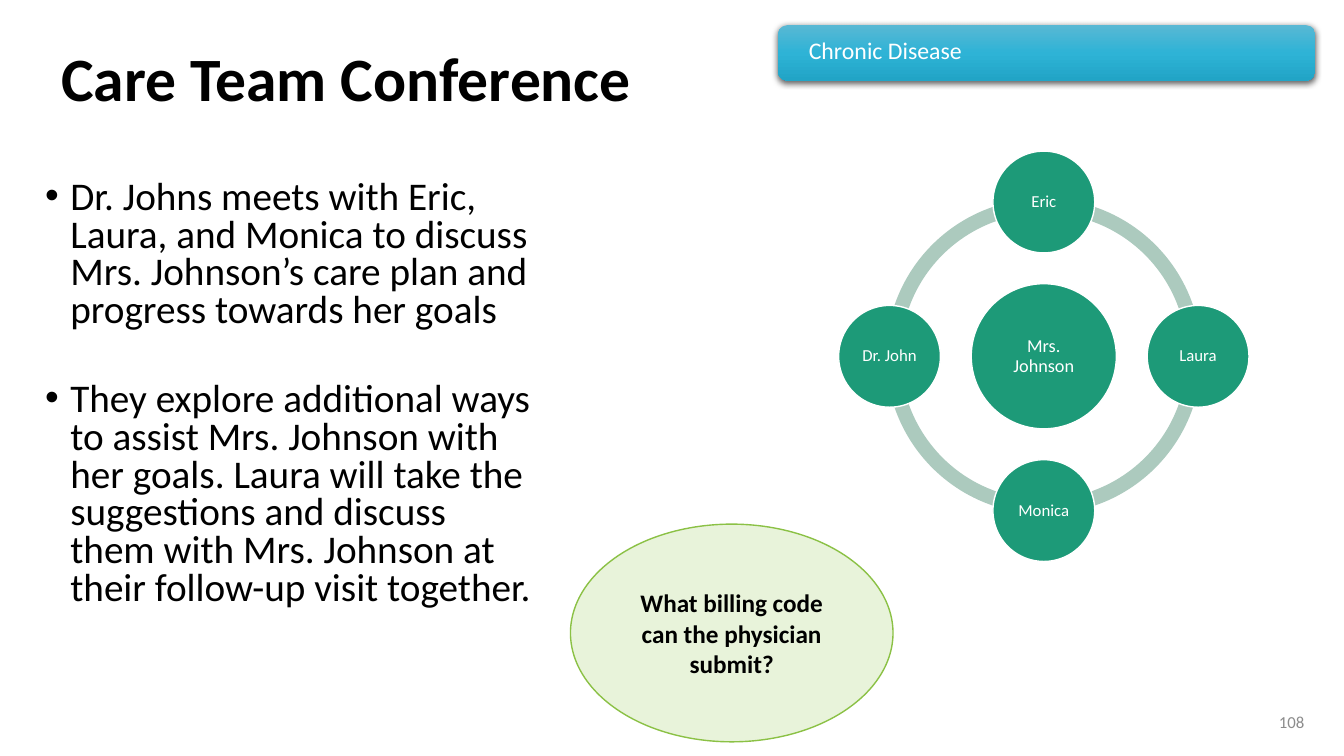
import copy
import math

import pptx
import pptx.dml.color
import pptx.enum.shapes
import pptx.enum.text
import pptx.oxml
import pptx.oxml.ns
import pptx.util

Pt = pptx.util.Pt
RGBColor = pptx.dml.color.RGBColor
MSO_SHAPE = pptx.enum.shapes.MSO_SHAPE
PP_ALIGN = pptx.enum.text.PP_ALIGN
MSO_ANCHOR = pptx.enum.text.MSO_ANCHOR
qn = pptx.oxml.ns.qn

BLACK = RGBColor(0x00, 0x00, 0x00)
WHITE = RGBColor(0xFF, 0xFF, 0xFF)
GRAY = RGBColor(0x8C, 0x8C, 0x8C)
GREEN = RGBColor(0x1D, 0x9A, 0x78)
PALE_GREEN = RGBColor(0xAC, 0xCA, 0xBE)
LIME = RGBColor(0x8B, 0xC1, 0x45)
PALE_LIME = RGBColor(0xE8, 0xF3, 0xDA)
BANNER_STOPS = [
    (0, RGBColor(0x59, 0xB8, 0xD4)),
    (0.5, RGBColor(0x2E, 0xB3, 0xD6)),
    (1, RGBColor(0x21, 0xA4, 0xC6)),
]

BULLETS = [
    "Dr. Johns meets with Eric, Laura, and Monica to discuss Mrs. Johnson’s "
    "care plan and progress towards her goals",
    "They explore additional ways to assist Mrs. Johnson with her goals. Laura "
    "will take the suggestions and discuss them with Mrs. Johnson at their "
    "follow-up visit together.",
]
CARE_TEAM = ["Eric", "Laura", "Monica", "Dr. John"]
CENTER_X, CENTER_Y = 745.6, 254.5
ORBIT_RADIUS = 110.2
RING_SIZE = 225.4


class SlideBuilder:
    font_name = "Calibri"

    def __init__(self, slide):
        self.slide = slide

    def set_text(self, shape, lines, size, color, bold=False,
                 align=PP_ALIGN.LEFT, anchor=MSO_ANCHOR.MIDDLE, spacing=1.0):
        frame = shape.text_frame
        frame.word_wrap = True
        frame.vertical_anchor = anchor
        frame.text = "\n".join(lines)
        for paragraph in frame.paragraphs:
            paragraph.alignment = align
            paragraph.line_spacing = spacing
            for run in paragraph.runs:
                run.font.name = self.font_name
                run.font.size = Pt(size)
                run.font.bold = bold
                run.font.color.rgb = color

    def text(self, left, top, width, height, lines, size, color, **style):
        box = self.slide.shapes.add_textbox(
            Pt(left), Pt(top), Pt(width), Pt(height))
        self.set_text(box, lines, size, color, **style)
        return box

    def bullets(self, left, top, width, height, lines, size, gap):
        box = self.text(left, top, width, height, lines, size, BLACK,
                        anchor=MSO_ANCHOR.TOP, spacing=0.8)
        for index, paragraph in enumerate(box.text_frame.paragraphs):
            if index:
                paragraph.space_before = Pt(gap)
            properties = paragraph._p.get_or_add_pPr()
            properties.set("marL", str(Pt(18)))
            properties.set("indent", str(-Pt(18)))
            namespace = pptx.oxml.ns.nsdecls("a")
            properties.append(pptx.oxml.parse_xml(
                f'<a:buFont {namespace} typeface="Arial"/>'))
            properties.append(pptx.oxml.parse_xml(
                f'<a:buChar {namespace} char="•"/>'))

    def shape(self, kind, left, top, width, height, fill=None, line=None):
        shape = self.slide.shapes.add_shape(
            kind, Pt(left), Pt(top), Pt(width), Pt(height))
        shape.shadow.inherit = False
        if fill is not None:
            shape.fill.solid()
            shape.fill.fore_color.rgb = fill
        if line is None:
            shape.line.fill.background()
        else:
            shape.line.color.rgb = line
            shape.line.width = Pt(1)
        return shape

    def banner(self, left, top, width, height, label):
        shape = self.shape(MSO_SHAPE.ROUNDED_RECTANGLE,
                           left, top, width, height)
        shape.fill.gradient()
        shape.fill.gradient_angle = 270
        properties = shape._element.spPr
        stop_list = properties.find(".//" + qn("a:gsLst"))
        stop_list.insert(1, copy.deepcopy(stop_list[0]))
        for stop, (position, color) in zip(shape.fill.gradient_stops,
                                           BANNER_STOPS):
            stop.position = position
            stop.color.rgb = color
        properties.find(qn("a:effectLst")).append(pptx.oxml.parse_xml(
            f'<a:outerShdw {pptx.oxml.ns.nsdecls("a")} blurRad="{Pt(4.5)}" '
            f'dist="{Pt(1.5)}" dir="5400000" rotWithShape="0">'
            '<a:srgbClr val="000000"><a:alpha val="63000"/></a:srgbClr>'
            '</a:outerShdw>'))
        self.set_text(shape, [label], 17, WHITE, spacing=0.9)
        shape.text_frame.margin_left = Pt(20)
        shape.text_frame.margin_top = Pt(0)
        shape.text_frame.margin_bottom = Pt(2)

    def ring(self, center_x, center_y, size):
        quarter = 54
        for index in range(4):
            arc = self.shape(MSO_SHAPE.BLOCK_ARC, center_x - size / 2,
                             center_y - size / 2, size, size, PALE_GREEN)
            arc.adjustments[0] = quarter * index
            arc.adjustments[1] = quarter * (index + 1) % 216
            arc.adjustments[2] = 0.046

    def person(self, center_x, center_y, diameter, name, size):
        circle = self.shape(MSO_SHAPE.OVAL, center_x - diameter / 2,
                            center_y - diameter / 2, diameter, diameter,
                            GREEN, WHITE)
        self.set_text(circle, [name], size, WHITE,
                      align=PP_ALIGN.CENTER, spacing=0.9)
        frame = circle.text_frame
        frame.margin_left = frame.margin_right = Pt(1.4)
        frame.margin_top = frame.margin_bottom = Pt(1.4)

    def question(self, left, top, width, height, wording):
        oval = self.shape(MSO_SHAPE.OVAL, left, top, width, height,
                          PALE_LIME, LIME)
        self.set_text(oval, [wording], 18, BLACK, bold=True,
                      align=PP_ALIGN.CENTER)


def main():
    presentation = pptx.Presentation()
    presentation.slide_width = Pt(960)
    presentation.slide_height = Pt(540)
    slide = presentation.slides.add_slide(presentation.slide_layouts[6])
    builder = SlideBuilder(slide)

    builder.text(36.7, 28.8, 524.2, 58.3, ["Care Team Conference"], 44, BLACK,
                 bold=True, spacing=0.9)
    builder.bullets(25.2, 125.3, 365, 347, BULLETS, 28, gap=37)
    builder.text(722.9, 501.1, 216, 28.8, ["108"], 12, GRAY,
                 align=PP_ALIGN.RIGHT)
    builder.question(407.5, 374.4, 230.4, 155.5,
                     "What billing code can the physician submit?")
    builder.banner(555.8, 18, 383.8, 39.6, "Chronic Disease")

    builder.ring(CENTER_X, CENTER_Y, RING_SIZE)
    builder.person(CENTER_X, CENTER_Y, 103.7, "Mrs.\vJohnson", 13)
    for index, name in enumerate(CARE_TEAM):
        angle = math.tau * index / len(CARE_TEAM)
        builder.person(CENTER_X + ORBIT_RADIUS * math.sin(angle),
                       CENTER_Y - ORBIT_RADIUS * math.cos(angle),
                       72.7, name, 12)

    presentation.save("out.pptx")


if __name__ == "__main__":
    main()
